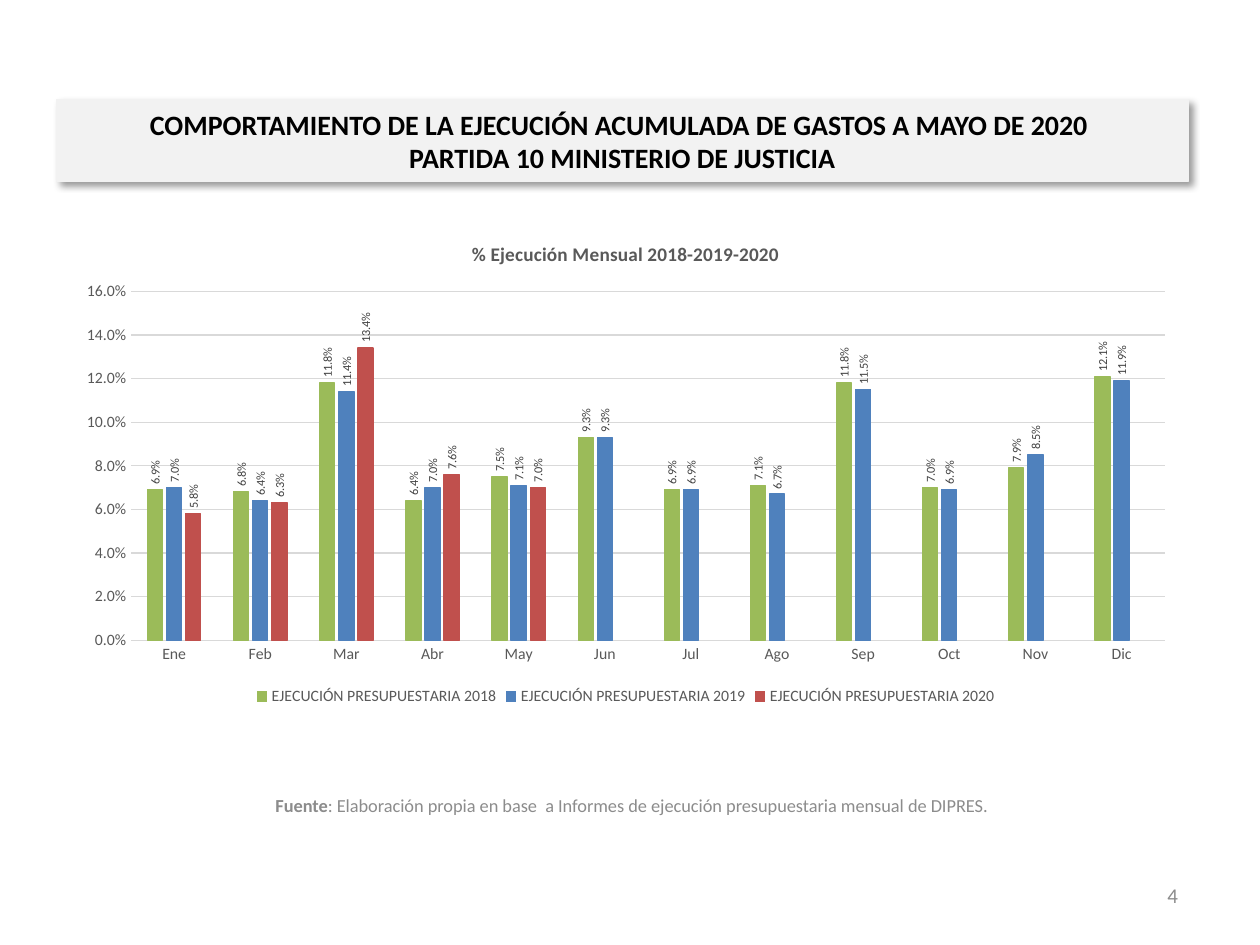
"""Builds a slide on monthly budget execution with a clustered column chart."""
from lxml import etree
from pptx import Presentation
from pptx.chart.data import CategoryChartData
from pptx.dml.color import RGBColor
from pptx.enum.chart import XL_CHART_TYPE, XL_LABEL_POSITION, XL_LEGEND_POSITION, XL_TICK_MARK
from pptx.enum.text import MSO_ANCHOR, MSO_AUTO_SIZE, PP_ALIGN
from pptx.oxml import parse_xml
from pptx.oxml.ns import nsdecls, qn
from pptx.util import Cm, Pt

COLUMN = XL_CHART_TYPE.COLUMN_CLUSTERED
OUTSIDE = XL_LABEL_POSITION.OUTSIDE_END
BOTTOM = XL_LEGEND_POSITION.BOTTOM
NO_TICK = XL_TICK_MARK.NONE
MIDDLE = MSO_ANCHOR.MIDDLE
FIXED = MSO_AUTO_SIZE.NONE
CENTER, RIGHT = PP_ALIGN.CENTER, PP_ALIGN.RIGHT

FONT = "Calibri"
PERCENT = "0.0%"
COLORS = {
    "black": "000000", "panel": "F2F2F2", "muted": "8C8C8C", "text": "595959",
    "label": "404040", "grid": "D9D9D9",
    "green": "9BBB59", "blue": "4F81BD", "red": "C0504D",
}
MONTHS = ["Ene", "Feb", "Mar", "Abr", "May", "Jun",
          "Jul", "Ago", "Sep", "Oct", "Nov", "Dic"]
YEARS = [
    (2018, "green", [0.069, 0.068, 0.118, 0.064, 0.075, 0.093,
                     0.069, 0.071, 0.118, 0.07, 0.079, 0.121]),
    (2019, "blue", [0.07, 0.064, 0.114, 0.07, 0.071, 0.093,
                    0.069, 0.067, 0.115, 0.069, 0.085, 0.119]),
    (2020, "red", [0.058, 0.063, 0.134, 0.076, 0.07] + [None] * 7),
]


class Deck:
    """Holds the style and the current slide."""

    def __init__(self):
        self.prs = Presentation()
        self.prs.slide_width, self.prs.slide_height = Cm(25.4), Cm(19.05)
        self.slide = self.prs.slides.add_slide(self.prs.slide_layouts[5])

    def color(self, name):
        return RGBColor.from_string(COLORS[name])

    def style(self, font, size, color, bold=False):
        font.name, font.size, font.bold = FONT, Pt(size), bold
        font.color.rgb = self.color(color)

    def stroke(self, line, color):
        line.color.rgb = self.color(color)
        line.width = Pt(0.75)

    def run(self, para, text, size, color, bold=False):
        run = para.add_run()
        run.text = text
        self.style(run.font, size, color, bold)

    def title(self, box, lines):
        shape = self.slide.shapes.title
        shape.left, shape.top, shape.width, shape.height = map(Cm, box)
        shape.fill.solid()
        shape.fill.fore_color.rgb = self.color("panel")
        self.stroke(shape.line, "panel")
        shape._element.spPr.append(parse_xml(
            f'<a:effectLst {nsdecls("a")}><a:outerShdw blurRad="{Pt(4)}" dist="{Pt(3)}" '
            'dir="2700000" algn="tl" rotWithShape="0"><a:srgbClr val="000000">'
            '<a:alpha val="40000"/></a:srgbClr></a:outerShdw></a:effectLst>'))
        frame = shape.text_frame
        frame.auto_size, frame.word_wrap = FIXED, True
        frame.vertical_anchor = MIDDLE
        para = frame.paragraphs[0]
        para.alignment = CENTER
        for i, text in enumerate(lines):
            if i:
                para.add_line_break()
            self.run(para, text, 16, "black", True)

    def text(self, box, runs, size, align):
        frame = self.slide.shapes.add_textbox(*map(Cm, box)).text_frame
        frame.word_wrap, frame.vertical_anchor = True, MIDDLE
        para = frame.paragraphs[0]
        para.alignment = align
        for text, bold in runs:
            self.run(para, text, size, "muted", bold)

    def chart(self, box, title):
        data = CategoryChartData(number_format=PERCENT)
        data.categories = MONTHS
        for year, _, vals in YEARS:
            data.add_series(f"EJECUCIÓN PRESUPUESTARIA {year}", vals)
        chart = self.slide.shapes.add_chart(COLUMN, *map(Cm, box), data).chart
        self.style(chart.font, 10, "black")
        chart.has_title = True
        self.run(chart.chart_title.text_frame.paragraphs[0], title, 11, "text", True)
        chart.chart_title.include_in_layout = False
        chart.has_legend = True
        chart.legend.position = BOTTOM
        chart.legend.include_in_layout = False
        self.style(chart.legend.font, 9, "text")
        self.axes(chart)
        plot = chart.plots[0]
        plot.gap_width, plot.overlap = 219, -27
        plot.vary_by_categories = False
        for series, (_, color, _) in zip(plot.series, YEARS):
            self.series(series, color)

    def axes(self, chart):
        cats, vals = chart.category_axis, chart.value_axis
        for axis in (cats, vals):
            axis.major_tick_mark = axis.minor_tick_mark = NO_TICK
            self.style(axis.tick_labels.font, 9, "text")
        self.stroke(cats.format.line, "grid")
        vals.format.line.fill.background()
        vals.minimum_scale, vals.maximum_scale, vals.major_unit = 0, 0.16, 0.02
        vals.has_major_gridlines = True
        self.stroke(vals.major_gridlines.format.line, "grid")
        vals.tick_labels.number_format = PERCENT
        vals.tick_labels.number_format_is_linked = False

    def series(self, series, color):
        series.format.fill.solid()
        series.format.fill.fore_color.rgb = self.color(color)
        self.stroke(series.format.line, color)
        series.invert_if_negative = False
        labels = series.data_labels
        labels.show_value, labels.position = True, OUTSIDE
        labels.number_format, labels.number_format_is_linked = PERCENT, False
        self.style(labels.font, 7, "label")
        body = next(labels._element.iter(qn("a:bodyPr")))
        body.set("rot", "-5400000")
        body.set("vert", "horz")


def main():
    deck = Deck()
    deck.title((1.14, 2.01, 22.81, 1.65),
               ["COMPORTAMIENTO DE LA EJECUCIÓN ACUMULADA DE GASTOS A MAYO DE 2020 ",
                "PARTIDA 10 MINISTERIO DE JUSTICIA"])
    deck.chart((1.3, 4.45, 22.63, 9.88), "% Ejecución Mensual 2018-2019-2020")
    deck.text((1.07, 15.72, 23.34, 1.02),
              [("Fuente", True),
               (": Elaboración propia en base  a Informes de ejecución "
                "presupuestaria mensual de DIPRES.", False)], 10.5, CENTER)
    deck.text((18.08, 17.53, 5.92, 1.02), [("4", False)], 12, RIGHT)
    deck.prs.save("out.pptx")


if __name__ == "__main__":
    main()
